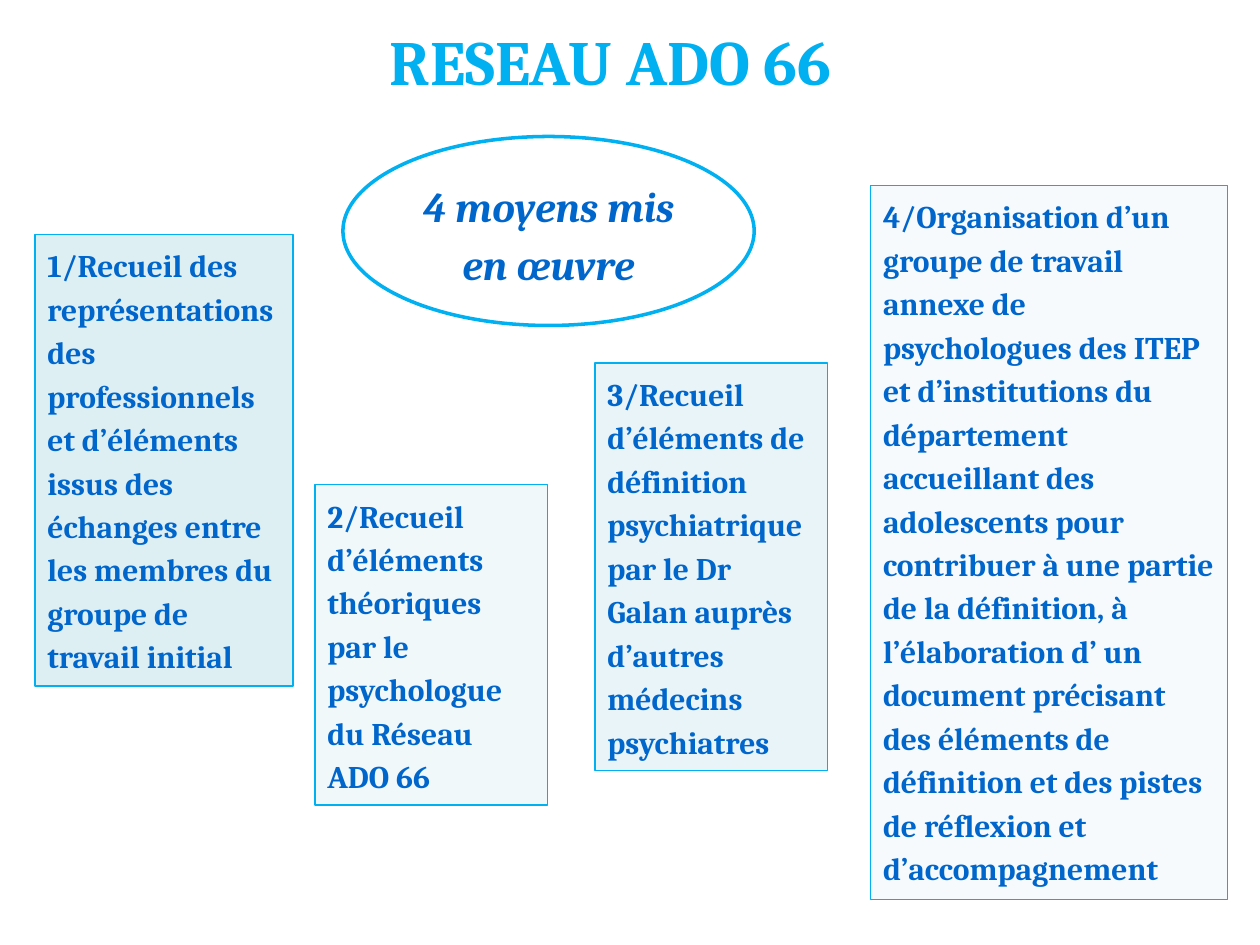
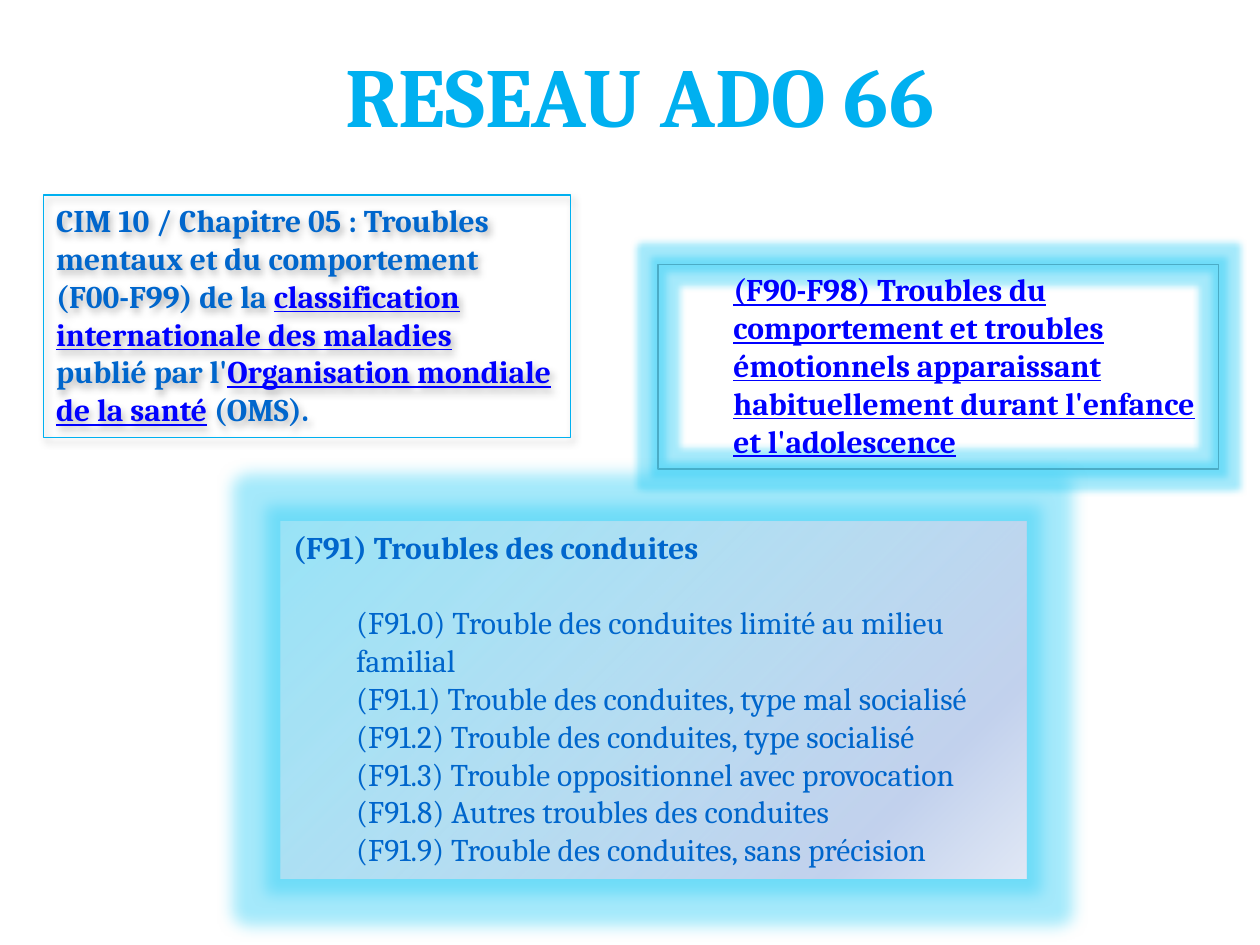
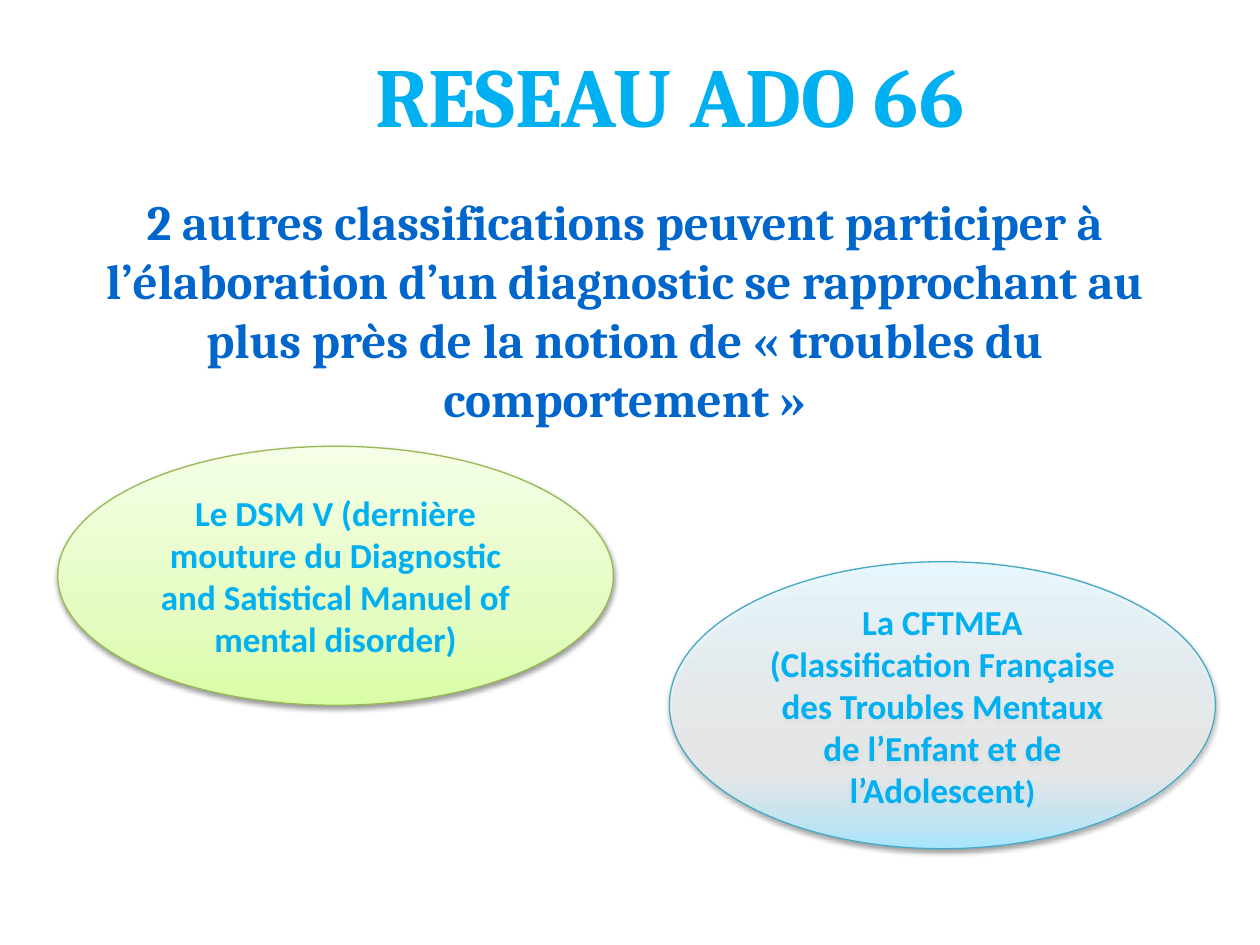
from lxml.etree import SubElement
from pptx import Presentation
from pptx.dml.color import RGBColor
from pptx.enum.shapes import MSO_SHAPE as Preset
from pptx.enum.text import MSO_ANCHOR as Anchor, PP_ALIGN as Align
from pptx.oxml.ns import qn
from pptx.util import Pt

WHITE = RGBColor(0xFF, 0xFF, 0xFF)
BLACK = RGBColor(0x00, 0x00, 0x00)
SKY = RGBColor(0x00, 0xB0, 0xF0)
BLUE = RGBColor(0x00, 0x66, 0xCC)
LINK = RGBColor(0x00, 0x00, 0xFF)
TEAL = RGBColor(0x4B, 0xAC, 0xC6)
DEEP_TEAL = RGBColor(0x46, 0xAA, 0xC5)
PALE_TEAL = RGBColor(0xDB, 0xEE, 0xF4)
SOFT_TEAL = RGBColor(0xB7, 0xDE, 0xE8)
GLOW = RGBColor(0x1E, 0xCA, 0xF5)
LAVENDER = RGBColor(0xC2, 0xD1, 0xED)
PALE_LAVENDER = RGBColor(0xE1, 0xE8, 0xF5)
OLIVE = RGBColor(0x98, 0xB9, 0x55)
LIME = RGBColor(0xDA, 0xFD, 0xA7)
SOFT_LIME = RGBColor(0xE4, 0xFC, 0xC2)
PALE_LIME = RGBColor(0xF5, 0xFF, 0xE7)
LIGHT_SKY = RGBColor(0xA7, 0xE6, 0xFF)
PALE_SKY = RGBColor(0xE7, 0xF8, 0xFF)


def add_box(slide, preset, bounds, stops=(), angle=0, line=None, width=0.75, effect=None):
    """Stops are (position %, colour, opacity %): none, one for a plain fill, more for a gradient.

    Effect is (tag, attributes, colour, opacity %).
    """
    box = slide.shapes.add_shape(preset, *map(Pt, bounds))
    box.shadow.inherit = False
    properties = box._element.spPr
    tints = []
    if not stops:
        box.fill.background()
    elif len(stops) == 1:
        box.fill.solid()
        box.fill.fore_color.rgb = stops[0][1]
        tints.append((properties.find(qn("a:solidFill"))[0], stops[0][2]))
    else:
        box.fill.gradient()
        box.fill.gradient_angle = angle
        stop_list = properties.find(qn("a:gradFill")).find(qn("a:gsLst"))
        for old_stop in list(stop_list):
            stop_list.remove(old_stop)
        for position, color, opacity in stops:
            stop = SubElement(stop_list, qn("a:gs"), pos=str(position * 1000))
            tints.append((SubElement(stop, qn("a:srgbClr"), val=str(color)), opacity))
    if line is None:
        box.line.fill.background()
    else:
        box.line.color.rgb = line
        box.line.width = Pt(width)
    if effect:
        tag, attributes, color, opacity = effect
        node = SubElement(properties.find(qn("a:effectLst")), qn(tag), attributes)
        tints.append((SubElement(node, qn("a:srgbClr"), val=str(color)), opacity))
    for tint, opacity in tints:
        if opacity < 100:
            SubElement(tint, qn("a:alpha"), val=str(opacity * 1000))
    return box


def write(shape, paragraphs, size, color=BLUE, font="Cambria", bold=True, italic=False,
          align=Align.LEFT, anchor=Anchor.TOP):
    """Each paragraph is a list of (text, changes to the font)."""
    frame = shape.text_frame
    frame.word_wrap = True
    frame.vertical_anchor = anchor
    for index, runs in enumerate(paragraphs):
        para = frame.add_paragraph() if index else frame.paragraphs[0]
        para.alignment = align
        for text, changes in runs:
            span = para.add_run()
            span.text = text
            span.font.name = font
            span.font.size = Pt(changes.get("size", size))
            span.font.bold = changes.get("bold", bold)
            span.font.italic = italic
            span.font.underline = changes.get("underline", False)
            span.font.color.rgb = changes.get("color", color)
    return frame


deck = Presentation()
deck.slide_width, deck.slide_height = Pt(720), Pt(540)

pages = []
for bounds, size, align in [
    ((60, 9.5, 578, 51), 36, Align.CENTER),
    ((190, 21, 368, 65.5), 48, Align.LEFT),
    ((139, 21, 487.5, 65.5), 48, Align.CENTER),
]:
    page = deck.slides.add_slide(deck.slide_layouts[5])
    title = page.shapes.title
    title.left, title.top, title.width, title.height = map(Pt, bounds)
    write(title, [[("RESEAU ADO 66", {})]], size, SKY, align=align)
    pages.append(page)
means_page, icd_page, other_page = pages

# Slide 1: the four means
means = add_box(means_page, Preset.OVAL, (196, 78, 235, 108), [(0, WHITE, 100)], line=SKY, width=2)
means_frame = write(means, [[("4 moyens mis en œuvre", {})]], 24, italic=True,
                    align=Align.CENTER, anchor=Anchor.MIDDLE)
frames = [means_frame]
for bounds, color, opacity, text in [
    ((20, 134, 147.5, 258), PALE_TEAL, 91,
     "1/Recueil des représentations des professionnels et d’éléments issus des échanges "
     "entre les membres du groupe de travail initial"),
    ((180, 277, 133, 183), SOFT_TEAL, 20,
     "2/Recueil d’éléments théoriques par le psychologue du Réseau ADO 66"),
    ((340, 207.5, 133, 233), PALE_TEAL, 61,
     "3/Recueil d’éléments de définition psychiatrique par le Dr Galan auprès d’autres "
     "médecins psychiatres"),
    ((497.5, 106, 204, 408), PALE_TEAL, 24,
     "4/Organisation d’un groupe de travail annexe de psychologues des ITEP et "
     "d’institutions du département accueillant des adolescents pour contribuer à une "
     "partie de la définition, à l’élaboration d’ un document précisant des éléments de "
     "définition et des pistes de réflexion et d’accompagnement"),
]:
    box = add_box(means_page, Preset.RECTANGLE, bounds, [(0, color, opacity)], line=SKY)
    frames.append(write(box, [[(text, {})]], 18))
for frame in frames:
    frame.paragraphs[0].line_spacing = 1.15
    frame.paragraphs[0].space_after = Pt(10)

# Slide 2: the CIM 10 chapters
link = {"color": LINK, "underline": True}
text_shadow = ("a:outerShdw", {"blurRad": str(Pt(4.5)), "dist": str(Pt(2.6)),
                               "dir": str(53 * 60000)}, BLACK, 30)
chapter = add_box(icd_page, Preset.RECTANGLE, (25, 111.5, 301, 138.5), line=SKY, effect=text_shadow)
write(chapter, [
    [("CIM 10 / Chapitre 05 : Troubles mentaux et du comportement (F00-F99) de la ", {}),
     ("classification internationale des maladies", link)],
    [("publié par l'", {}), ("Organisation mondiale de la santé", link), (" (OMS).", {})],
], 18)

block = add_box(icd_page, Preset.RECTANGLE, (376, 151, 320.5, 117), line=TEAL,
                effect=("a:glow", {"rad": str(Pt(8))}, GLOW, 40))
block_frame = write(block, [[
    ("(F90-F98) Troubles du comportement et troubles émotionnels apparaissant "
     "habituellement durant l'enfance et l'adolescence", link)]], 18)

conducts = add_box(icd_page, Preset.RECTANGLE, (160.5, 298, 426, 204),
                   [(0, PALE_TEAL, 38), (82, LAVENDER, 100), (100, PALE_LAVENDER, 100)], angle=315,
                   effect=("a:glow", {"rad": str(Pt(18))}, GLOW, 40))
codes = [
    "(F91.0) Trouble des conduites limité au milieu familial",
    "(F91.1) Trouble des conduites, type mal socialisé",
    "(F91.2) Trouble des conduites, type socialisé",
    "(F91.3) Trouble oppositionnel avec provocation",
    "(F91.8) Autres troubles des conduites",
    "(F91.9) Trouble des conduites, sans précision",
]
conducts_frame = write(conducts, [[("(F91) Troubles des conduites", {})]]
                       + [[(code, {"bold": False})] for code in codes], 18)
conducts_frame.paragraphs[0].space_after = Pt(21.6)
for para in block_frame.paragraphs + conducts_frame.paragraphs[1:]:
    para.level = 1
    para._p.get_or_add_pPr().set("marL", str(Pt(36)))

# Slide 3: the two other classifications
statement = other_page.shapes.add_textbox(*map(Pt, (48, 106, 618, 143.5)))
write(statement, [[
    ("2 autres classifications peuvent participer à l’élaboration d’un diagnostic se "
     "rapprochant au plus près de la notion de « troubles du comportement »", {})]],
    28, align=Align.CENTER)

drop_shadow = ("a:outerShdw", {"blurRad": str(Pt(3.1)), "dist": str(Pt(1.6)),
                               "dir": str(90 * 60000)}, BLACK, 38)
for bounds, stops, line, runs in [
    ((33, 255, 317.5, 148),
     [(0, LIME, 100), (35, SOFT_LIME, 100), (100, PALE_LIME, 100)], OLIVE,
     [("Le DSM V (dernière mouture du Diagnostic and Satistical Manuel of mental disorder)", {})]),
    ((382.5, 321, 312, 164),
     [(0, LIGHT_SKY, 100), (28, WHITE, 56), (100, PALE_SKY, 100)], DEEP_TEAL,
     [("La CFTMEA (Classification Française des Troubles Mentaux de l’Enfant et de "
       "l’Adolescent", {}), (")", {"size": 18})]),
]:
    oval = add_box(other_page, Preset.OVAL, bounds, stops, 90, line, effect=drop_shadow)
    write(oval, [runs], 20, SKY, "Calibri", align=Align.CENTER, anchor=Anchor.MIDDLE)

deck.save("out.pptx")
